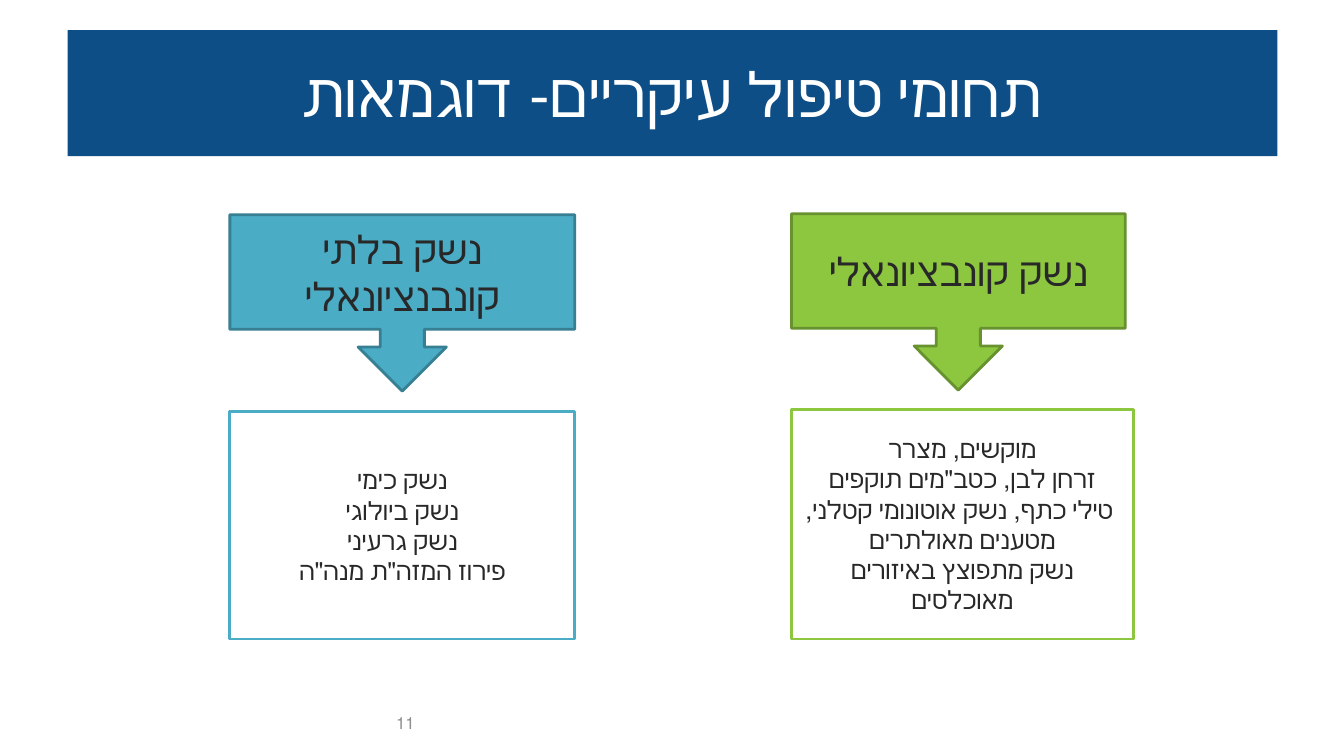
from pptx import Presentation
from pptx.dml.color import RGBColor
from pptx.enum.shapes import MSO_SHAPE as Shape
from pptx.enum.text import MSO_ANCHOR as Anchor, PP_ALIGN as Align
from pptx.util import Inches, Pt

FONT = "Calibri"
WHITE = RGBColor(0xFF, 0xFF, 0xFF)
NAVY = RGBColor(0x0E, 0x4E, 0x86)
DARK = RGBColor(0x28, 0x28, 0x29)
GRAY = RGBColor(0x8E, 0x8E, 0x8E)
GREEN = RGBColor(0x8D, 0xC6, 0x3F)
DARK_GREEN = RGBColor(0x68, 0x92, 0x2F)
TEAL = RGBColor(0x4B, 0xAC, 0xC6)
DARK_TEAL = RGBColor(0x37, 0x7F, 0x92)

# Content
TITLE = "תחומי טיפול עיקריים- דוגמאות"
PAGE_NUMBER = "11"
COLUMNS = [
    {
        "heading": "נשק קונבציונאלי",
        "examples": [
            "מוקשים, מצרר",
            "זרחן לבן, כטב\"מים תוקפים",
            " טילי כתף, נשק אוטונומי קטלני,",
            "מטענים מאולתרים",
            "נשק מתפוצץ באיזורים מאוכלסים",
        ],
        "color": GREEN, "outline": DARK_GREEN, "left": 7.85,
        "callout_top": 2.12, "callout_width": 3.31,
        "box_top": 4.06, "box_width": 3.39,
    },
    {
        "heading": "נשק בלתי קונבנציונאלי",
        "examples": [
            "נשק כימי",
            "נשק ביולוגי",
            "נשק גרעיני",
            "פירוז המזה\"ת מנה\"ה",
        ],
        "color": TEAL, "outline": DARK_TEAL, "left": 2.28,
        "callout_top": 2.13, "callout_width": 3.42,
        "box_top": 4.08, "box_width": 3.42,
    },
]
CALLOUT_HEIGHT = 1.75
BOX_BOTTOM = 6.34


def write(shape, lines, size, color, align=Align.CENTER):
    """Fill a shape with right-to-left paragraphs."""
    frame = shape.text_frame
    frame.word_wrap = True
    frame.vertical_anchor = Anchor.MIDDLE
    frame.text = "\n".join(lines)
    for paragraph in frame.paragraphs:
        paragraph.alignment = align
        paragraph._p.get_or_add_pPr().set("rtl", "1")
        font = paragraph.font
        font.size = Pt(size)
        font.name = FONT
        font.color.rgb = color


def add_panel(slide, kind, box, fill, outline, lines, size):
    shape = slide.shapes.add_shape(kind, *map(Inches, box))
    shape.shadow.inherit = False
    shape.fill.solid()
    shape.fill.fore_color.rgb = fill
    shape.line.color.rgb = outline
    shape.line.width = Pt(2)
    write(shape, lines, size, DARK)


presentation = Presentation()
presentation.slide_width = Inches(13.33)
presentation.slide_height = Inches(7.5)
slide = presentation.slides.add_slide(presentation.slide_layouts[5])

# Title band
title = slide.shapes.title
title.left, title.top = Inches(0.67), Inches(0.3)
title.width, title.height = Inches(12), Inches(1.25)
title.fill.solid()
title.fill.fore_color.rgb = NAVY
write(title, [TITLE], 44, WHITE)

# Page number
number = slide.shapes.add_textbox(Inches(3.83), Inches(6.97), Inches(3.11), Inches(0.4))
write(number, [PAGE_NUMBER], 12, GRAY, Align.LEFT)

# Heading callouts, each pointing to its box of examples
for column in COLUMNS:
    left, box_top = column["left"], column["box_top"]
    add_panel(slide, Shape.DOWN_ARROW_CALLOUT,
              (left, column["callout_top"], column["callout_width"], CALLOUT_HEIGHT),
              column["color"], column["outline"], [column["heading"]], 28)
    add_panel(slide, Shape.RECTANGLE,
              (left, box_top, column["box_width"], BOX_BOTTOM - box_top),
              WHITE, column["color"], column["examples"], 18)

presentation.save("out.pptx")
